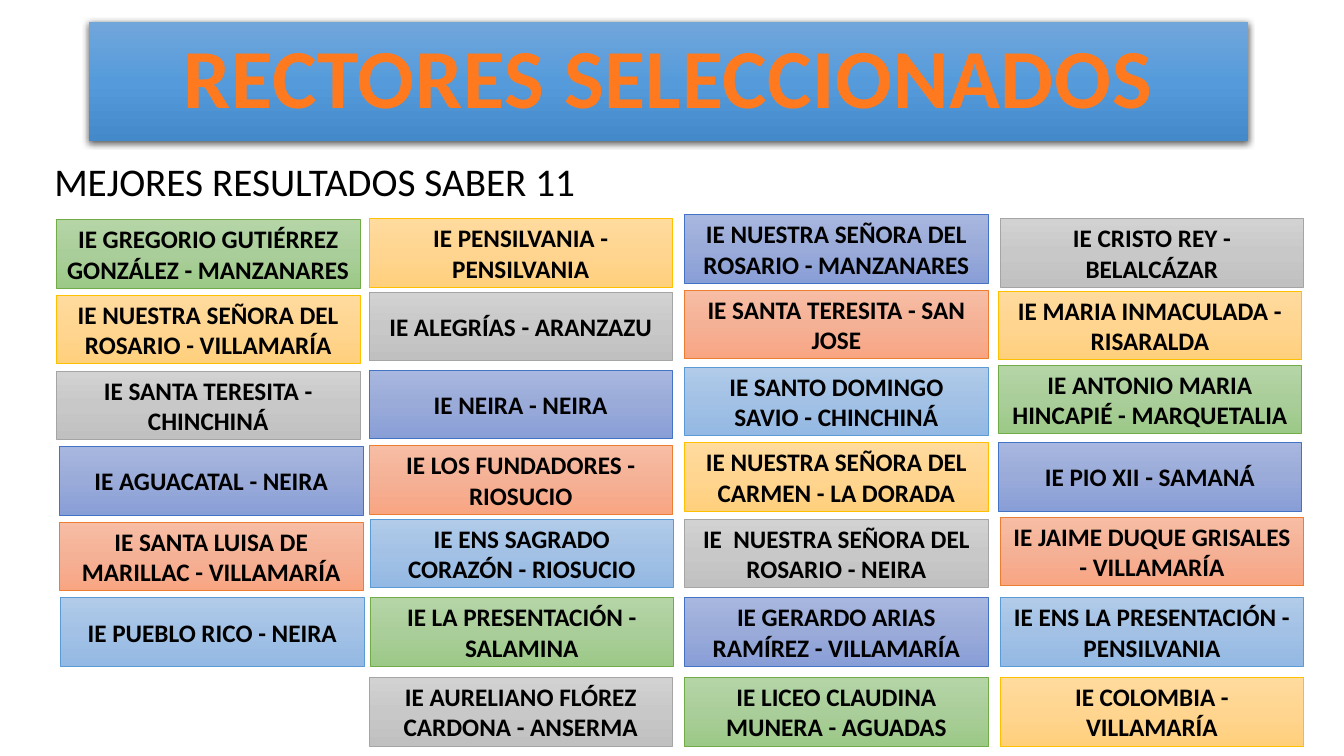
import pptx
import pptx.util
import pptx.dml.color
import pptx.enum.shapes
import pptx.enum.text
import pptx.oxml
import pptx.oxml.ns

Inches = pptx.util.Inches
Pt = pptx.util.Pt
RGB = pptx.dml.color.RGBColor.from_string
text = pptx.enum.text
space = pptx.oxml.ns.nsdecls("a")

look = {
    "ink": "000000",
    "edge": Pt(0.5),
    "bar": [(0, "71A6DB"), (50, "559BDB"), (100, "448ACA")],
    "head": [(25, "FF7A1F"), (100, "CA5200")],
    "title": {"name": "Calibri", "size": Pt(60), "bold": True},
    "label": {"name": "Calibri", "size": Pt(28), "bold": False},
    "card": {"name": "Calibri", "size": Pt(18), "bold": True},
    "green": ("70AD47", [(0, "B5D5A7"), (50, "AACE9A"), (100, "9CC987")]),
    "gold": ("FFC000", [(0, "FFDB9E"), (50, "FFD590"), (100, "FFD07C")]),
    "gray": ("A5A5A5", [(0, "D2D2D2"), (50, "C8C8C8"), (100, "C0C0C0")]),
    "blue": ("4472C4", [(0, "A8B7DF"), (50, "9AABD9"), (100, "889ED7")]),
    "coral": ("ED7D31", [(0, "F7BDA5"), (50, "F5B196"), (100, "F8A582")]),
    "sky": ("5B9BD5", [(0, "B1CBE9"), (50, "A3C1E5"), (100, "93B9E4")]),
}


def shade(fill, props, stops):
    fill.solid()
    marks = "".join(
        f'<a:gs pos="{spot * 1000}"><a:srgbClr val="{tone}"/></a:gs>'
        for spot, tone in stops
    )
    grad = pptx.oxml.parse_xml(
        f'<a:gradFill {space} rotWithShape="1"><a:gsLst>{marks}</a:gsLst>'
        '<a:lin ang="5400000" scaled="0"/></a:gradFill>'
    )
    props.replace(props.find(pptx.oxml.ns.qn("a:solidFill")), grad)


def write(shape, words, style, align, anchor, fit):
    frame = shape.text_frame
    frame.word_wrap = True
    frame.auto_size = fit
    frame.vertical_anchor = anchor
    para = frame.paragraphs[0]
    para.alignment = align
    run = para.add_run()
    run.text = words
    for key, value in look[style].items():
        setattr(run.font, key, value)
    run.font.color.rgb = RGB(look["ink"])
    return para, run


deck = pptx.Presentation()
deck.slide_width = Inches(13.33)
deck.slide_height = Inches(7.5)
slide = deck.slides.add_slide(deck.slide_layouts[5])
center = text.PP_ALIGN.CENTER
middle = text.MSO_ANCHOR.MIDDLE
fixed = text.MSO_AUTO_SIZE.NONE

title = slide.shapes.title
place = {"left": 0.88, "top": 0.22, "width": 11.5, "height": 1.18}
for key, value in place.items():
    setattr(title, key, Inches(value))
bar = title._element.spPr
shade(title.fill, bar, look["bar"])
bar.append(pptx.oxml.parse_xml(
    f'<a:effectLst {space}><a:outerShdw blurRad="57150" dist="19050" '
    'dir="5400000" algn="ctr" rotWithShape="0"><a:srgbClr val="000000">'
    '<a:alpha val="63000"/></a:srgbClr></a:outerShdw></a:effectLst>'
))
para, run = write(title, "RECTORES SELECCIONADOS", "title", center, middle, fixed)
para.line_spacing = 0.9
props = run._r.get_or_add_rPr()
props.set("spc", "50")
shade(run.font.fill, props, look["head"])

label = slide.shapes.add_textbox(
    Inches(0.44), Inches(1.51), Inches(11.54), Inches(0.57)
)
write(label, "MEJORES RESULTADOS SABER 11", "label", text.PP_ALIGN.LEFT,
      text.MSO_ANCHOR.TOP, text.MSO_AUTO_SIZE.SHAPE_TO_FIT_TEXT)

columns = [
    ([0.56] * 3 + [0.59] * 2 + [0.6], [2.18 + 0.75 * row for row in range(6)], [
        ("green", "IE GREGORIO GUTIÉRREZ GONZÁLEZ - MANZANARES"),
        ("gold", "IE NUESTRA SEÑORA DEL ROSARIO - VILLAMARÍA"),
        ("gray", "IE SANTA TERESITA - CHINCHINÁ"),
        ("blue", "IE AGUACATAL - NEIRA"),
        ("coral", "IE SANTA LUISA DE MARILLAC - VILLAMARÍA"),
        ("sky", "IE PUEBLO RICO - NEIRA"),
    ]),
    ([3.66] * 4 + [3.67] * 2 + [3.66], [2.17, 2.9, 3.67, 4.42, 5.15, 5.93, 6.72], [
        ("gold", "IE PENSILVANIA - PENSILVANIA"),
        ("gray", "IE ALEGRÍAS - ARANZAZU"),
        ("blue", "IE NEIRA - NEIRA"),
        ("coral", "IE LOS FUNDADORES - RIOSUCIO"),
        ("sky", "IE ENS SAGRADO CORAZÓN - RIOSUCIO"),
        ("green", "IE LA PRESENTACIÓN - SALAMINA"),
        ("gray", "IE AURELIANO FLÓREZ CARDONA - ANSERMA"),
    ]),
    ([6.79] * 7, [2.13, 2.88, 3.64, 4.39, 5.15, 5.93, 6.72], [
        ("blue", "IE NUESTRA SEÑORA DEL ROSARIO - MANZANARES"),
        ("coral", "IE SANTA TERESITA - SAN JOSE"),
        ("sky", "IE SANTO DOMINGO SAVIO - CHINCHINÁ"),
        ("gold", "IE NUESTRA SEÑORA DEL CARMEN - LA DORADA"),
        ("gray", "IE  NUESTRA SEÑORA DEL ROSARIO - NEIRA"),
        ("blue", "IE GERARDO ARIAS RAMÍREZ - VILLAMARÍA"),
        ("green", "IE LICEO CLAUDINA MUNERA - AGUADAS"),
    ]),
    ([9.92] + [9.9] * 3 + [9.92] * 3, [2.17, 2.89, 3.62, 4.39, 5.13, 5.93, 6.72], [
        ("gray", "IE CRISTO REY - BELALCÁZAR"),
        ("gold", "IE MARIA INMACULADA - RISARALDA"),
        ("green", "IE ANTONIO MARIA HINCAPIÉ - MARQUETALIA"),
        ("blue", "IE PIO XII - SAMANÁ"),
        ("coral", "IE JAIME DUQUE GRISALES - VILLAMARÍA"),
        ("sky", "IE ENS LA PRESENTACIÓN - PENSILVANIA"),
        ("gold", "IE COLOMBIA - VILLAMARÍA"),
    ]),
]

for lefts, tops, schools in columns:
    for left, top, (tint, school) in zip(lefts, tops, schools):
        card = slide.shapes.add_shape(
            pptx.enum.shapes.MSO_SHAPE.RECTANGLE,
            Inches(left), Inches(top), Inches(3.01), Inches(0.68),
        )
        edge, stops = look[tint]
        card.shadow.inherit = False
        card.line.color.rgb = RGB(edge)
        card.line.width = look["edge"]
        shade(card.fill, card._element.spPr, stops)
        write(card, school, "card", center, middle, fixed)

deck.save("out.pptx")
